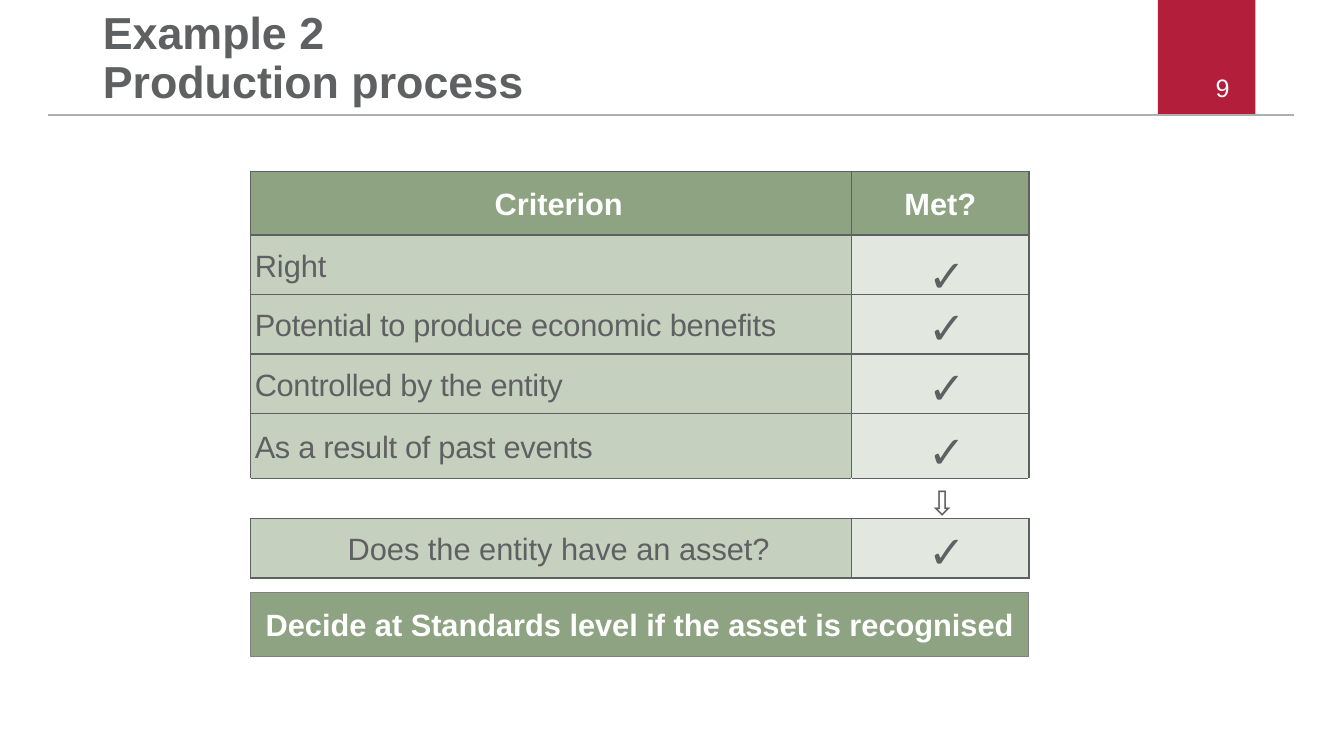
from dataclasses import dataclass

from lxml import etree
from pptx import Presentation
from pptx.dml.color import RGBColor
from pptx.enum.shapes import MSO_CONNECTOR, MSO_SHAPE
from pptx.enum.text import MSO_ANCHOR, MSO_AUTO_SIZE, PP_ALIGN
from pptx.oxml.ns import qn
from pptx.util import Cm, Pt

LEFT, CENTER, RIGHT = PP_ALIGN.LEFT, PP_ALIGN.CENTER, PP_ALIGN.RIGHT
TOP, MIDDLE, BOTTOM = MSO_ANCHOR.TOP, MSO_ANCHOR.MIDDLE, MSO_ANCHOR.BOTTOM
RECTANGLE, STRAIGHT = MSO_SHAPE.RECTANGLE, MSO_CONNECTOR.STRAIGHT
FIXED_SIZE = MSO_AUTO_SIZE.NONE
TITLE_ONLY = 5


@dataclass(frozen=True)
class Theme:
    font: str = "Arial"
    grey: str = "5F6062"
    white: str = "FFFFFF"
    red: str = "B31E3B"
    green: str = "8DA381"
    rule: str = "AFAFB0"
    outline: str = "808080"
    heading: int = 32
    arrow: int = 24
    body: int = 22
    number: int = 18


class SlideBuilder:
    def __init__(self, slide, theme):
        self.slide = slide
        self.theme = theme

    def run(self, paragraph, text, size, color, bold=False, tracking=0):
        """Add a run; tracking is letter spacing in hundredths of a point."""
        run = paragraph.add_run()
        run.text = text
        run.font.name = self.theme.font
        run.font.size = Pt(size)
        run.font.bold = bold
        run.font.color.rgb = RGBColor.from_string(color)
        if tracking:
            run.font._element.set("spc", str(tracking))

    def title(self, lines, left, top, width, height):
        title = self.slide.shapes.title
        title.left, title.top = Cm(left), Cm(top)
        title.width, title.height = Cm(width), Cm(height)
        frame = title.text_frame
        frame.auto_size = FIXED_SIZE
        frame.word_wrap = True
        frame.vertical_anchor = BOTTOM
        frame.margin_left = frame.margin_right = 0
        frame.margin_top = frame.margin_bottom = 0
        paragraph = frame.paragraphs[0]
        paragraph.alignment = LEFT
        paragraph.line_spacing = 0.9
        paragraph.space_before = Pt(0)
        for index, line in enumerate(lines):
            if index:
                paragraph.add_line_break()
            self.run(paragraph, line, self.theme.heading, self.theme.grey, True)

    def block(self, left, top, width, height, fill, outline=None, text=None):
        shape = self.slide.shapes.add_shape(
            RECTANGLE, Cm(left), Cm(top), Cm(width), Cm(height))
        shape.shadow.inherit = False
        shape.fill.solid()
        shape.fill.fore_color.rgb = RGBColor.from_string(fill)
        if outline:
            shape.line.color.rgb = RGBColor.from_string(outline)
            shape.line.width = Pt(0.75)
        else:
            shape.line.fill.background()
        if text:
            shape.text_frame.word_wrap = True
            shape.text_frame.vertical_anchor = MIDDLE
            paragraph = shape.text_frame.paragraphs[0]
            paragraph.alignment = CENTER
            self.run(paragraph, text, self.theme.body, self.theme.white, True)

    def rule(self, left, right, y):
        line = self.slide.shapes.add_connector(
            STRAIGHT, Cm(left), Cm(y), Cm(right), Cm(y))
        line.line.color.rgb = RGBColor.from_string(self.theme.rule)
        line.line.width = Pt(1.2)
        etree.SubElement(line._element.spPr, qn("a:effectLst"))

    def label(self, text, left, top, width, height, size, color,
              align=LEFT, anchor=TOP):
        box = self.slide.shapes.add_textbox(
            Cm(left), Cm(top), Cm(width), Cm(height))
        box.text_frame.word_wrap = True
        box.text_frame.vertical_anchor = anchor
        paragraph = box.text_frame.paragraphs[0]
        paragraph.alignment = align
        self.run(paragraph, text, size, color)

    def table(self, left, top, widths, heights):
        frame = self.slide.shapes.add_table(
            len(heights), len(widths), Cm(left), Cm(top),
            Cm(sum(widths)), Cm(sum(heights)))
        table = frame.table
        table.first_row = table.horz_banding = False
        for column, width in zip(table.columns, widths):
            column.width = Cm(width)
        for row, height in zip(table.rows, heights):
            row.height = Cm(height)
        return table

    def paint_cell(self, cell, opacity, side_color):
        """Fill a cell at an opacity in percent (0 for none) and edge it."""
        if opacity:
            cell.fill.solid()
            cell.fill.fore_color.rgb = RGBColor.from_string(self.theme.green)
        else:
            cell.fill.background()
        properties = cell._tc.get_or_add_tcPr()
        if 0 < opacity < 100:
            color = properties.find(".//" + qn("a:srgbClr"))
            etree.SubElement(color, qn("a:alpha"), val=str(opacity * 1000))
        edges = {"a:lnL": side_color, "a:lnR": side_color,
                 "a:lnT": self.theme.grey, "a:lnB": self.theme.grey}
        for index, (tag, edge_color) in enumerate(edges.items()):
            edge = etree.Element(qn(tag), w=str(Pt(1)))
            solid = etree.SubElement(edge, qn("a:solidFill"))
            etree.SubElement(solid, qn("a:srgbClr"), val=edge_color)
            properties.insert(index, edge)

    def write_cell(self, cell, runs, color, bold=False, align=LEFT, indent=0):
        cell.vertical_anchor = MIDDLE
        cell.margin_left = cell.margin_right = Cm(0.1)
        cell.margin_top = cell.margin_bottom = 0
        paragraph = cell.text_frame.paragraphs[0]
        paragraph.alignment = align
        paragraph.line_spacing = 1.1
        paragraph.space_before = paragraph.space_after = Pt(3)
        if indent:
            paragraph._p.get_or_add_pPr().set("marL", str(Cm(indent)))
        for text, tracking in runs:
            self.run(paragraph, text, self.theme.body, color, bold, tracking)


CRITERIA = [
    [("Right", 0)],
    [("Potential to produce ", -20), ("economic benefits", -10)],
    [("Controlled by the entity", -20)],
    [("As a result of past events", -20)],
]
QUESTION = [("Does the entity have an asset?", 0)]
TABLE_LEFT, TABLE_TOP = 6.32, 4.32
COLUMN_WIDTHS = [15.14, 4.47]
ROW_HEIGHTS = [1.6, 1.5, 1.5, 1.5, 1.63, 0.97, 1.5]
GAP_ROW, QUESTION_ROW = 5, 6
MARK_LEFT = 23.14
TICK_TOPS = [6.12, 7.42, 8.94, 10.54, 13.08]


def add_criteria_table(builder):
    theme = builder.theme
    table = builder.table(TABLE_LEFT, TABLE_TOP, COLUMN_WIDTHS, ROW_HEIGHTS)
    for row in range(len(ROW_HEIGHTS)):
        opacities = {0: (100, 100), GAP_ROW: (0, 0)}.get(row, (50, 25))
        sides = theme.white if row == GAP_ROW else theme.grey
        for column, opacity in enumerate(opacities):
            builder.paint_cell(table.cell(row, column), opacity, sides)
    builder.write_cell(table.cell(0, 0), [("Criterion", 0)], theme.white,
                       True, CENTER, 0.38)
    builder.write_cell(table.cell(0, 1), [("Met?", 0)], theme.white,
                       True, CENTER)
    for row, criterion in enumerate(CRITERIA, start=1):
        builder.write_cell(table.cell(row, 0), criterion, theme.grey)
    builder.write_cell(table.cell(QUESTION_ROW, 0), QUESTION, theme.grey,
                       align=CENTER, indent=0.38)


def main():
    theme = Theme()
    deck = Presentation()
    deck.slide_width, deck.slide_height = Cm(33.87), Cm(19.05)
    slide = deck.slides.add_slide(deck.slide_layouts[TITLE_ONLY])
    builder = SlideBuilder(slide, theme)

    builder.block(29.18, 0, 2.46, 2.9, theme.red)
    builder.rule(1.22, 32.61, 2.9)
    builder.label("9", 23.34, 1.7, 7.9, 1.02, theme.number, theme.white,
                  RIGHT, MIDDLE)
    builder.title(["Example 2", "Production process"], 2.59, 0, 25.1, 2.72)
    add_criteria_table(builder)
    for top in TICK_TOPS:
        builder.label("✓", MARK_LEFT, top, 0.99, 1.63, theme.heading, theme.grey)
    builder.label("⇩", MARK_LEFT, 12.01, 1.19, 1.27, theme.arrow, theme.grey)
    builder.block(TABLE_LEFT, 14.94, sum(COLUMN_WIDTHS), 1.6, theme.green,
                  theme.outline,
                  "Decide at Standards level if the asset is recognised")
    deck.save("out.pptx")


if __name__ == "__main__":
    main()
